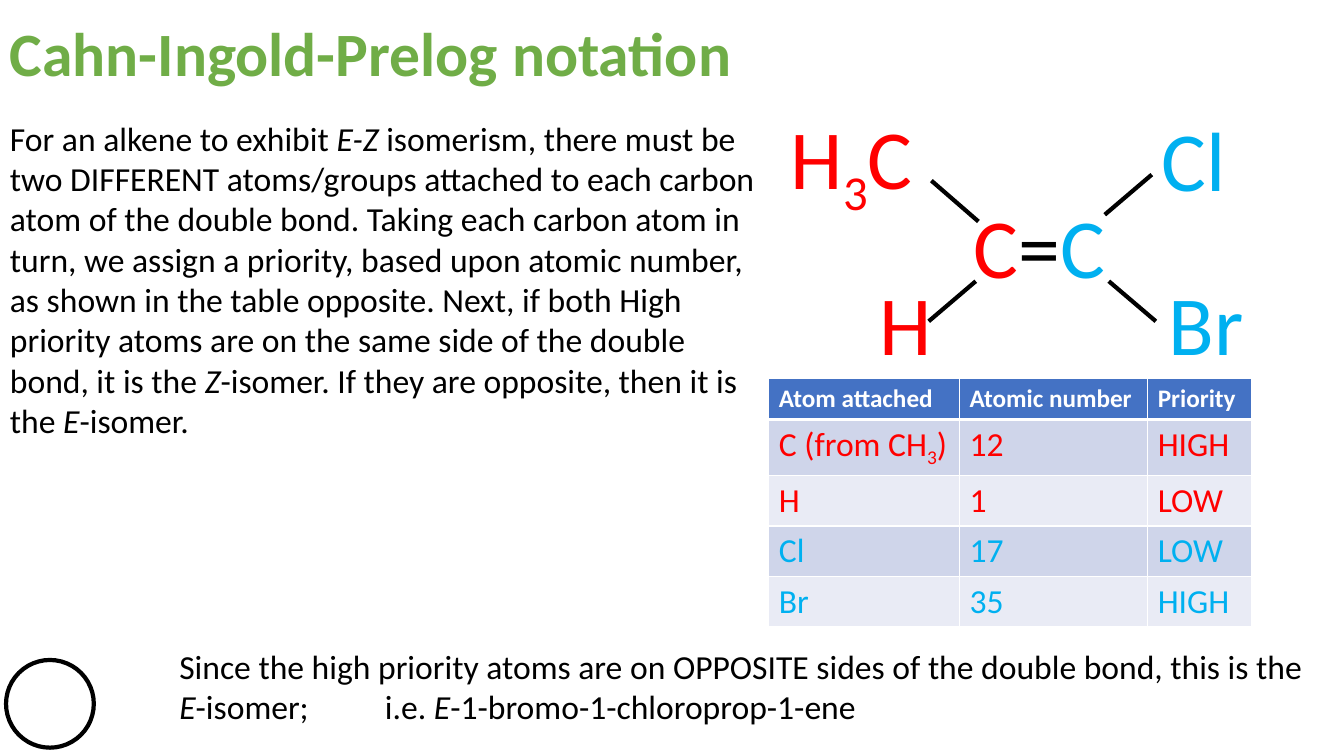
from lxml.etree import SubElement
from pptx import Presentation
from pptx.dml.color import RGBColor
from pptx.enum.shapes import MSO_CONNECTOR as Connector, MSO_SHAPE as Preset
from pptx.enum.text import MSO_ANCHOR as Anchor
from pptx.oxml.ns import qn
from pptx.util import Inches, Pt

COLORS = {
    "title": "70AD47", "text": "000000", "white": "FFFFFF",
    "left": "FF0000", "right": "00B0F0",
    "header": "4472C4", "odd": "CFD5EA", "even": "E9EBF5",
}
ITALIC = {"italic": True}
SUBSCRIPT = {"baseline": -25000}


class SlideBuilder:
    """Draws on one slide; lengths are percent of the slide's width and height."""

    font_name = "Calibri"
    line_width = Pt(3)

    def __init__(self, presentation):
        self.column = presentation.slide_width / 100
        self.row = presentation.slide_height / 100
        self.slide = presentation.slides.add_slide(presentation.slide_layouts[6])
        self.shapes = self.slide.shapes

    def place(self, left, top, width, height):
        return (round(left * self.column), round(top * self.row),
                round(width * self.column), round(height * self.row))

    def color(self, name):
        return RGBColor.from_string(COLORS[name])

    def add_runs(self, paragraph, runs, **base):
        """Add runs, each a string or a (string, format) pair."""
        for item in [runs] if isinstance(runs, str) else runs:
            text, extra = (item, {}) if isinstance(item, str) else item
            values = {"name": self.font_name, **base, **extra}
            run = paragraph.add_run()
            run.text = text
            run.font.color.rgb = self.color(values.pop("color", "text"))
            baseline = values.pop("baseline", None)
            if baseline:
                run._r.get_or_add_rPr().set("baseline", str(baseline))
            for name, value in values.items():
                setattr(run.font, name, value)

    def text(self, box, runs, tab=None, anchor=Anchor.TOP, spacing=None, **base):
        frame = self.shapes.add_textbox(*self.place(*box)).text_frame
        frame.word_wrap = True
        frame.vertical_anchor = anchor
        paragraph = frame.paragraphs[0]
        if spacing:
            paragraph.line_spacing = spacing
        if tab:
            stops = SubElement(paragraph._p.get_or_add_pPr(), qn("a:tabLst"))
            SubElement(stops, qn("a:tab"), pos=str(Inches(tab)), algn="l")
        self.add_runs(paragraph, runs, **base)

    def circle(self, box):
        shape = self.shapes.add_shape(Preset.OVAL, *self.place(*box))
        shape.shadow.inherit = False
        shape.fill.solid()
        shape.fill.fore_color.rgb = self.color("white")
        shape.line.color.rgb = self.color("text")
        shape.line.width = self.line_width

    def bond(self, start, end):
        connector = self.shapes.add_connector(
            Connector.STRAIGHT, *self.place(*start, *end))
        connector.line.color.rgb = self.color("text")
        connector.line.width = self.line_width
        SubElement(connector._element.spPr, qn("a:effectLst"))

    def borders(self, cell, bottom):
        properties = cell._tc.get_or_add_tcPr()
        widths = {"a:lnL": 1, "a:lnR": 1, "a:lnT": 1, "a:lnB": bottom}
        for position, (tag, width) in enumerate(widths.items()):
            line = SubElement(properties, qn(tag), w=str(Pt(width)))
            fill = SubElement(line, qn("a:solidFill"))
            SubElement(fill, qn("a:srgbClr"), val=COLORS["white"])
            properties.insert(position, line)

    def table(self, left, top, columns, row_height, rows):
        """Draw rows given as (text colour, cell texts), the header first."""
        box = self.place(left, top, sum(columns), row_height * len(rows))
        table = self.shapes.add_table(len(rows), len(columns), *box).table
        for column, width in zip(table.columns, columns):
            column.width = round(width * self.column)
        for index, (color, texts) in enumerate(rows):
            table.rows[index].height = round(row_height * self.row)
            header = index == 0
            fill = "header" if header else "odd" if index % 2 else "even"
            for position, runs in enumerate(texts):
                cell = table.cell(index, position)
                cell.fill.solid()
                cell.fill.fore_color.rgb = self.color(fill)
                self.borders(cell, 3 if header else 1)
                self.add_runs(cell.text_frame.paragraphs[0], runs, color=color,
                              size=Pt(18 if header else 24), bold=header)


def main():
    presentation = Presentation()
    presentation.slide_width = Inches(13.33)
    presentation.slide_height = Inches(7.5)
    builder = SlideBuilder(presentation)

    builder.circle((0.45, 87.3, 6.53, 11.6))
    builder.text((0, 0, 75.1, 14.9), "Cahn-Ingold-Prelog notation",
                 anchor=Anchor.MIDDLE, spacing=0.9,
                 size=Pt(44), bold=True, color="title")

    atoms = [
        ((71.7, 25.1, 12.5), "left",
         ["C", ("=", {"color": "text"}), ("C", {"color": "right"})]),
        ((58.1, 13.3, 16.2), "left", ["H", ("3", SUBSCRIPT), "C"]),
        ((64.7, 35.2, 4.3), "left", "H"),
        ((85.7, 13.6, 7), "right", "Cl"),
        ((86.2, 35.2, 10.6), "right", "Br"),
    ]
    for place, color, runs in atoms:
        builder.text((*place, 14.8), runs, size=Pt(60), color=color)

    bonds = [
        ((82.2, 28.4), (85.7, 23.1)),
        ((69.1, 42.5), (72.6, 37.2)),
        ((86, 42.5), (82.5, 37.2)),
        ((72.8, 29.3), (69.3, 23.9)),
    ]
    for start, end in bonds:
        builder.bond(start, end)

    builder.table(57.2, 50, (14.2, 14, 7.7), 5.5, [
        ("white", ("Atom attached", "Atomic number", "Priority")),
        ("left", (["C (from CH", ("3", SUBSCRIPT), ")"], "12", "HIGH")),
        ("left", ("H", "1", "LOW")),
        ("right", ("Cl", "17", "LOW")),
        ("right", ("Br", "35", "HIGH")),
    ])

    builder.text((12.6, 84.8, 86.7, 12.1), [
        "Since the high priority atoms are on OPPOSITE sides of the double "
        "bond, this is the ", ("E", ITALIC), "-isomer;\ti.e. ", ("E", ITALIC),
        "-1-bromo-1-chloroprop-1-ene",
    ], tab=2.04, size=Pt(24))
    builder.text((0, 14.9, 56.9, 55.2), [
        "For an alkene to exhibit ", ("E-Z", ITALIC),
        " isomerism, there must be two DIFFERENT atoms/groups attached to each "
        "carbon atom of the double bond. Taking each carbon atom in turn, we "
        "assign a priority, based upon atomic number, as shown in the table "
        "opposite. Next, if both High priority atoms are on the same side of "
        "the double bond, it is the ", ("Z", ITALIC),
        "-isomer. If they are opposite, then it is the ", ("E", ITALIC), "-isomer.",
    ], size=Pt(24))
    presentation.save("out.pptx")


if __name__ == "__main__":
    main()
